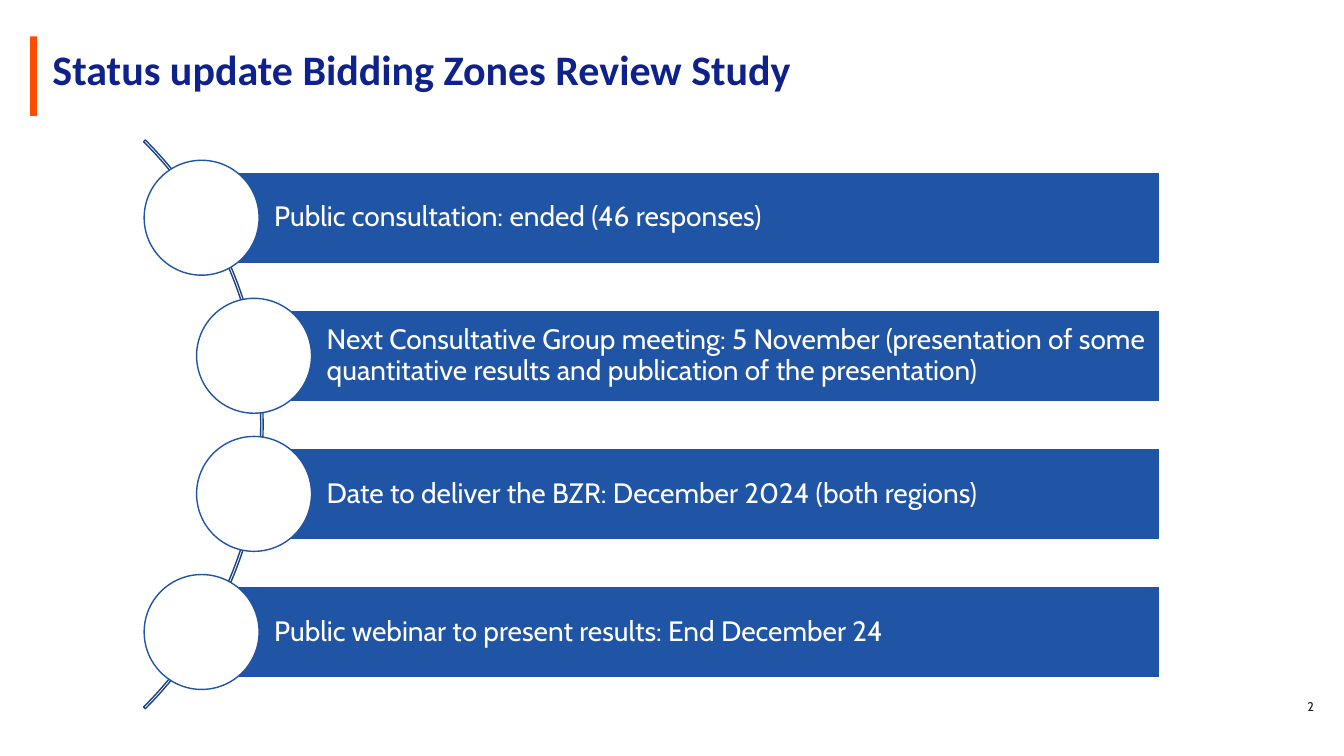
from dataclasses import dataclass

import pptx
import pptx.dml.color
import pptx.enum.shapes
import pptx.enum.text
import pptx.shapes.autoshape
import pptx.text.text
import pptx.util

Inches = pptx.util.Inches
Pt = pptx.util.Pt
Kind = pptx.enum.shapes.MSO_SHAPE
Align = pptx.enum.text.PP_ALIGN
Anchor = pptx.enum.text.MSO_ANCHOR


@dataclass(frozen=True)
class Theme:
    blue: str = "2054A5"
    edge: str = "1A4384"
    navy: str = "0F218B"
    orange: str = "FF4D00"
    white: str = "FFFFFF"
    ink: str = "1D1D20"
    head: str = "Calibri"
    body: str = "Cabin"
    title: float = 30
    item: float = 20
    small: float = 9


@dataclass(frozen=True)
class Item:
    text: str
    left: float


THEME = Theme()
OUTER, INNER = 2.0, 2.52
ITEMS = (
    Item("Public consultation: ended (46 responses)", OUTER),
    Item("Next Consultative Group meeting: 5 November (presentation of some "
         "quantitative results and publication of the presentation)", INNER),
    Item("Date to deliver the BZR: December 2024 (both regions)", INNER),
    Item("Public webinar to present results: End December 24", OUTER),
)
FIRST, STEP = 2.16, 1.37  # middle of the first bar, distance between bars
RIGHT, HIGH, ROUND = 11.5, 0.91, 1.14
ARC = 7.98


def color(code: str) -> pptx.dml.color.RGBColor:
    return pptx.dml.color.RGBColor.from_string(code)


def shape(shapes, kind: Kind, box: tuple[float, ...], fill: str | None,
          line: str | None) -> pptx.shapes.autoshape.Shape:
    form = shapes.add_shape(kind, *map(Inches, box))
    form.shadow.inherit = False
    if fill:
        form.fill.solid()
        form.fill.fore_color.rgb = color(fill)
    else:
        form.fill.background()
    if line:
        form.line.color.rgb = color(line)
        form.line.width = Pt(1)
    else:
        form.line.fill.background()
    return form


def write(frame: pptx.text.text.TextFrame, text: str, face: str, size: float,
          tint: str, align: Align, space: float | pptx.util.Length,
          bold: bool = False) -> None:
    frame.word_wrap = True
    frame.auto_size = pptx.enum.text.MSO_AUTO_SIZE.NONE
    frame.vertical_anchor = Anchor.MIDDLE
    para = frame.paragraphs[0]
    para.alignment = align
    para.line_spacing = space
    run = para.add_run()
    run.text = text
    run.font.name = face
    run.font.size = Pt(size)
    run.font.bold = bold
    run.font.color.rgb = color(tint)


def draw(shapes, item: Item, mid: float) -> None:
    """Draw a bar with its text and the circle centred on its left end."""
    bar = shape(shapes, Kind.RECTANGLE,
                (item.left, mid - HIGH / 2, RIGHT - item.left, HIGH),
                THEME.blue, THEME.white)
    frame = bar.text_frame
    frame.margin_left = Inches(0.72)
    frame.margin_right = frame.margin_top = frame.margin_bottom = Inches(0.06)
    write(frame, item.text, THEME.body, THEME.item, THEME.white,
          Align.LEFT, 0.9)
    shape(shapes, Kind.OVAL,
          (item.left - ROUND / 2, mid - ROUND / 2, ROUND, ROUND),
          THEME.white, THEME.blue)


def main() -> None:
    deck = pptx.Presentation()
    deck.slide_width, deck.slide_height = Inches(13.33), Inches(7.5)
    slide = deck.slides.add_slide(deck.slide_layouts.get_by_name("Title Only"))

    shape(slide.shapes, Kind.RECTANGLE, (0.3, 0.36, 0.07, 0.79),
          THEME.orange, None)
    title = slide.shapes.title
    title.left, title.top = Inches(0.42), Inches(0.51)
    title.width, title.height = Inches(12.71), Inches(0.39)
    write(title.text_frame, "Status update Bidding Zones Review Study",
          THEME.head, THEME.title, THEME.navy, Align.LEFT, Pt(32), True)

    group = slide.shapes.add_group_shape().shapes
    arc = shape(group, Kind.BLOCK_ARC, (-5.37, 0.22, ARC, ARC),
                None, THEME.edge)
    for index, value in enumerate((189, 27, 0.003)):
        arc.adjustments[index] = value
    for index, item in enumerate(ITEMS):
        draw(group, item, FIRST + index * STEP)

    number = slide.shapes.add_textbox(*map(Inches, (6.75, 6.82, 6.38, 0.4)))
    write(number.text_frame, "2", THEME.body, THEME.small, THEME.ink,
          Align.RIGHT, Pt(9))
    deck.save("out.pptx")


if __name__ == "__main__":
    main()
